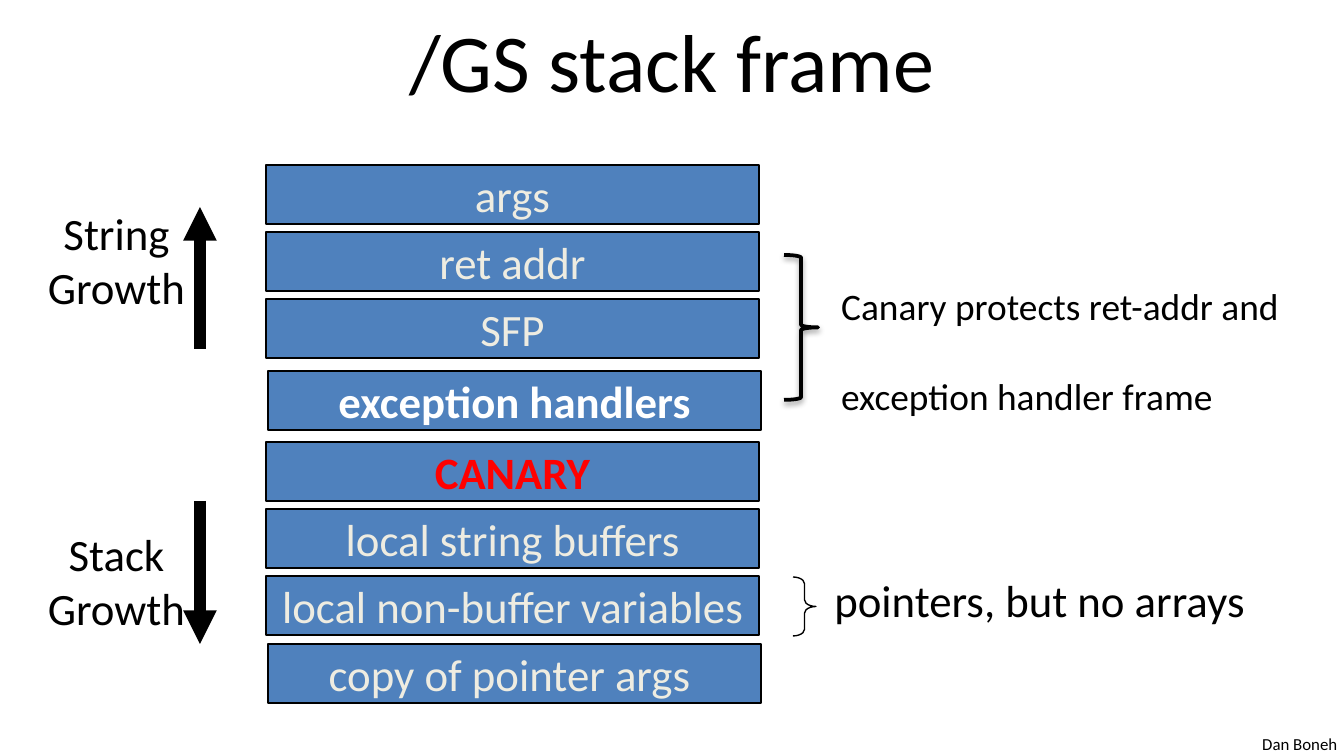
import pptx
import pptx.util
import pptx.dml.color
import pptx.enum.shapes
import pptx.enum.text
import pptx.oxml
import pptx.oxml.ns

PX = 914400 / 134.4
COLORS = {"black": "000000", "blue": "4F81BD", "cream": "EEECE1",
          "red": "FF0000", "white": "FFFFFF"}
SHAPE = pptx.enum.shapes.MSO_SHAPE
ALIGN = pptx.enum.text.PP_ALIGN
ANCHOR = pptx.enum.text.MSO_ANCHOR
NS = pptx.oxml.ns.nsdecls("a")


def emu(*lengths):
    return [round(n * PX) for n in lengths]


def write(sp, lines, size, color="black", bold=False, align=ALIGN.CENTER,
          anchor=ANCHOR.TOP, gap=0):
    tf = sp.text_frame
    tf.word_wrap = False
    tf.vertical_anchor = anchor
    for i, line in enumerate(lines):
        p = tf.paragraphs[0] if i == 0 else tf.add_paragraph()
        p.text = line
        p.alignment = align
        p.space_before = pptx.util.Pt(gap if i else 0)
        p.font.name = "Calibri"
        p.font.size = pptx.util.Pt(size)
        p.font.bold = bold
        p.font.color.rgb = pptx.dml.color.RGBColor.from_string(COLORS[color])


black = pptx.dml.color.RGBColor.from_string(COLORS["black"])
blue = pptx.dml.color.RGBColor.from_string(COLORS["blue"])

prs = pptx.Presentation()
prs.slide_width, prs.slide_height = emu(1344, 756)
s = prs.slides.add_slide(prs.slide_layouts[6])

# Footer and title
write(s.shapes.add_textbox(*emu(1249, 727, 102, 34)), ["Dan Boneh"], 9,
      align=ALIGN.LEFT)
write(s.shapes.add_textbox(*emu(67, -3, 1210, 126)), ["/GS stack frame"], 44,
      anchor=ANCHOR.MIDDLE)

# Stack frame, from high to low addresses
frame = [
    ("args", 266, 165, "cream"),
    ("ret addr", 266, 232, "cream"),
    ("SFP", 266, 299, "cream"),
    ("exception handlers", 268, 371, "white"),
    ("CANARY", 266, 442, "red"),
    ("local string buffers", 266, 509, "cream"),
    ("local non-buffer variables", 266, 576, "cream"),
    ("copy of pointer args ", 268, 644, "cream"),
]
for label, left, top, color in frame:
    sp = s.shapes.add_shape(SHAPE.RECTANGLE, *emu(left, top, 493, 59))
    sp.shadow.inherit = False
    sp.fill.solid()
    sp.fill.fore_color.rgb = blue
    sp.line.color.rgb = black
    sp.line.width = pptx.util.Pt(0.75)
    write(sp, [label], 24, color, bold=color != "cream", anchor=ANCHOR.MIDDLE)

# Growth arrows with their labels
for label, label_top, start, end in [("String\vGrowth", 199, 349, 207),
                                     ("Stack\vGrowth", 520, 501, 644)]:
    line = s.shapes.add_connector(pptx.enum.shapes.MSO_CONNECTOR.STRAIGHT,
                                  *emu(200, start, 200, end))
    line.line.color.rgb = black
    line.line.width = pptx.util.Pt(6)
    line.line._get_or_add_ln().append(
        pptx.oxml.parse_xml(f'<a:tailEnd {NS} type="triangle"/>'))
    line._element.spPr.append(pptx.oxml.parse_xml(f"<a:effectLst {NS}/>"))
    write(s.shapes.add_textbox(*emu(33, label_top, 167, 122)), [label], 24)

# Braces
for box, bend, width in [((784, 255, 34, 145), 0.08, 2),
                         ((793, 577, 23, 59), 0.29, 0.75)]:
    brace = s.shapes.add_shape(SHAPE.RIGHT_BRACE, *emu(*box))
    brace.adjustments[0] = bend
    brace.shadow.inherit = False
    brace.fill.background()
    brace.line.color.rgb = black
    brace.line.width = pptx.util.Pt(width)
    if width == 2:
        effects = brace._element.spPr.find(pptx.oxml.ns.qn("a:effectLst"))
        effects.append(pptx.oxml.parse_xml(
            f'<a:outerShdw {NS} blurRad="40000" dist="20000" dir="5400000" '
            f'rotWithShape="0"><a:srgbClr val="{COLORS["black"]}">'
            '<a:alpha val="38000"/></a:srgbClr></a:outerShdw>'))

# Notes beside the braces
write(s.shapes.add_textbox(*emu(828, 277, 470, 103)),
      ["Canary protects ret-addr and ", "exception handler frame"], 20,
      align=ALIGN.LEFT, gap=24)
write(s.shapes.add_textbox(*emu(817, 566, 445, 67)),
      ["pointers, but no arrays"], 24)

prs.save("out.pptx")
